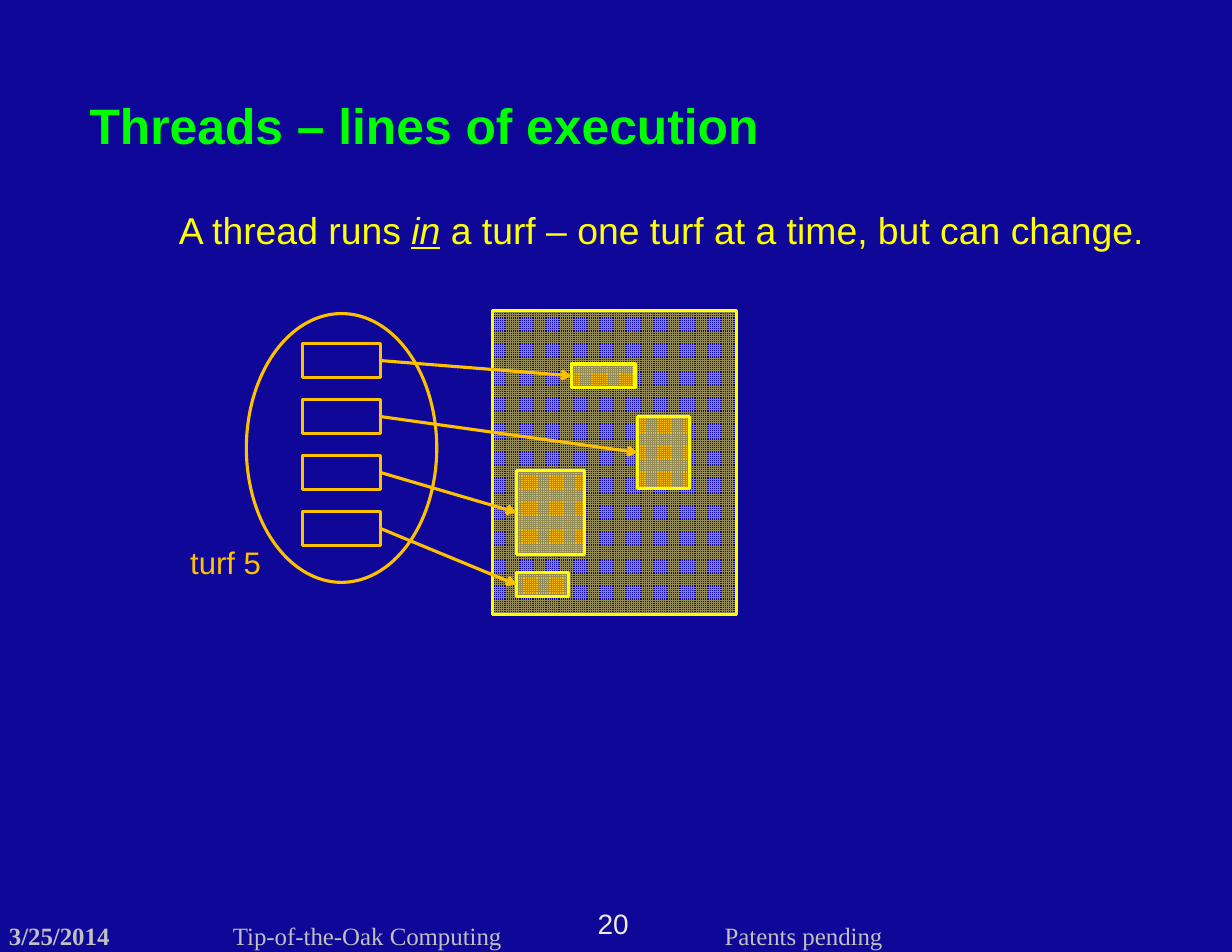
from lxml import etree
from pptx import Presentation
from pptx import util as u
from pptx.dml.color import RGBColor
from pptx.enum import dml, shapes, text
from pptx.oxml.ns import qn

WIDTH, HEIGHT = 11, 8.5
NAVY, YELLOW, AMBER, GREEN = "0E0797", "FFFF00", "FFC000", "00FF00"
KHAKI, SILVER, CREAM = "948A54", "C0C0C0", "EEECE1"
SANS, SERIF = "Arial", "Times New Roman"
TIGHT, PADDED = (0, 0), (0.1, 0.05)
PLAIN, BOLD, EMPHASIS = {}, {"bold": True}, {"italic": True, "underline": True}

# place, (font, size, colour), (side inset, top inset), wrap, alignment, runs
LEFT, CENTER = text.PP_ALIGN.LEFT, text.PP_ALIGN.CENTER
FOOTER = (SERIF, 16, SILVER)
TEXTS = [
    ((0.08, 8.22, 1, 0.26), FOOTER, TIGHT, False, LEFT, [("3/25/2014", BOLD)]),
    ((5.32, 8.09, 0.31, 0.3), (SANS, 18, CREAM), TIGHT, False, CENTER, [("20", PLAIN)]),
    ((2.08, 8.22, 2.6, 0.26), FOOTER, TIGHT, False, LEFT,
     [("Tip-of-the-Oak Computing", PLAIN)]),
    ((6.47, 8.22, 1.42, 0.27), FOOTER, TIGHT, False, LEFT, [("Patents pending", PLAIN)]),
    ((0.8, 0.82, 9.23, 0.52), (SANS, 32, GREEN), (0, 0.03), True, LEFT,
     [("Threads – lines of execution", BOLD)]),
    ((1.6, 4.8, 0.84, 0.44), (SANS, 20, AMBER), PADDED, False, LEFT, [("turf 5", PLAIN)]),
    ((1.5, 1.8, 8.9, 0.5), (SANS, 24, YELLOW), PADDED, False, LEFT,
     [("A thread runs ", PLAIN), ("in", EMPHASIS),
      (" a turf – one turf at a time, but can change.", PLAIN)]),
]

MEMORY = (4.4, 2.77, 2.18, 2.72)
TURF = (2.2, 2.8, 1.7, 2.4)
# One memory region for each turf entry, from top to bottom
REGIONS = [
    (5.1, 3.25, 0.57, 0.21),
    (5.69, 3.72, 0.47, 0.64),
    (4.61, 4.2, 0.61, 0.75),
    (4.61, 5.11, 0.47, 0.22),
]
ENTRY_WIDTH, ENTRY_HEIGHT, ENTRY_TOP, ENTRY_STEP = 0.7, 0.3, 3.07, 0.5


def rgb(value):
    return RGBColor.from_string(value)


def inches(values):
    return [u.Inches(value) for value in values]


def add_outline(page, kind, place, color, ground=None):
    """Draw an outlined shape, with a small grid over ground if that is given."""
    shape = page.shapes.add_shape(kind, *inches(place))
    shape.shadow.inherit = False
    shape.line.color.rgb = rgb(color)
    shape.line.width = u.Pt(2)
    if ground is None:
        shape.fill.background()
    else:
        shape.fill.patterned()
        shape.fill.pattern = dml.MSO_PATTERN.SMALL_GRID
        shape.fill.fore_color.rgb = rgb(KHAKI)
        shape.fill.back_color.rgb = rgb(ground)


def add_arrow(page, start, end):
    arrow = page.shapes.add_connector(
        shapes.MSO_CONNECTOR.STRAIGHT, *inches(start + end))
    arrow.line.color.rgb = rgb(AMBER)
    arrow.line.width = u.Pt(2)
    properties = arrow._element.spPr
    etree.SubElement(properties.find(qn("a:ln")), qn("a:tailEnd"), type="arrow")
    etree.SubElement(properties, qn("a:effectLst"))


def add_text(page, place, style, insets, wrap, align, runs):
    name, size, color = style
    frame = page.shapes.add_textbox(*inches(place)).text_frame
    frame.word_wrap = wrap
    side, top = inches(insets)
    frame.margin_left = frame.margin_right = side
    frame.margin_top = top
    frame.margin_bottom = top if insets == PADDED else 0
    para = frame.paragraphs[0]
    para.alignment = align
    for words, emphasis in runs:
        span = para.add_run()
        span.text = words
        span.font.name, span.font.size = name, u.Pt(size)
        span.font.color.rgb = rgb(color)
        for key, value in emphasis.items():
            setattr(span.font, key, value)


def main():
    deck = Presentation()
    deck.slide_width, deck.slide_height = inches((WIDTH, HEIGHT))
    page = deck.slides.add_slide(deck.slide_layouts[6])
    page.background.fill.solid()
    page.background.fill.fore_color.rgb = rgb(NAVY)

    box, oval = shapes.MSO_SHAPE.RECTANGLE, shapes.MSO_SHAPE.OVAL
    add_outline(page, box, MEMORY, YELLOW, NAVY)
    add_outline(page, oval, TURF, AMBER)
    entry_left = TURF[0] + (TURF[2] - ENTRY_WIDTH) / 2
    for row, region in enumerate(REGIONS):
        entry_top = ENTRY_TOP + row * ENTRY_STEP
        add_outline(page, box, (entry_left, entry_top, ENTRY_WIDTH, ENTRY_HEIGHT), AMBER)
        add_outline(page, box, region, YELLOW, AMBER)
        left, top, _, height = region
        add_arrow(page, (entry_left + ENTRY_WIDTH, entry_top + ENTRY_HEIGHT / 2),
                  (left, top + height / 2))
    for item in TEXTS:
        add_text(page, *item)
    deck.save("out.pptx")


if __name__ == "__main__":
    main()
